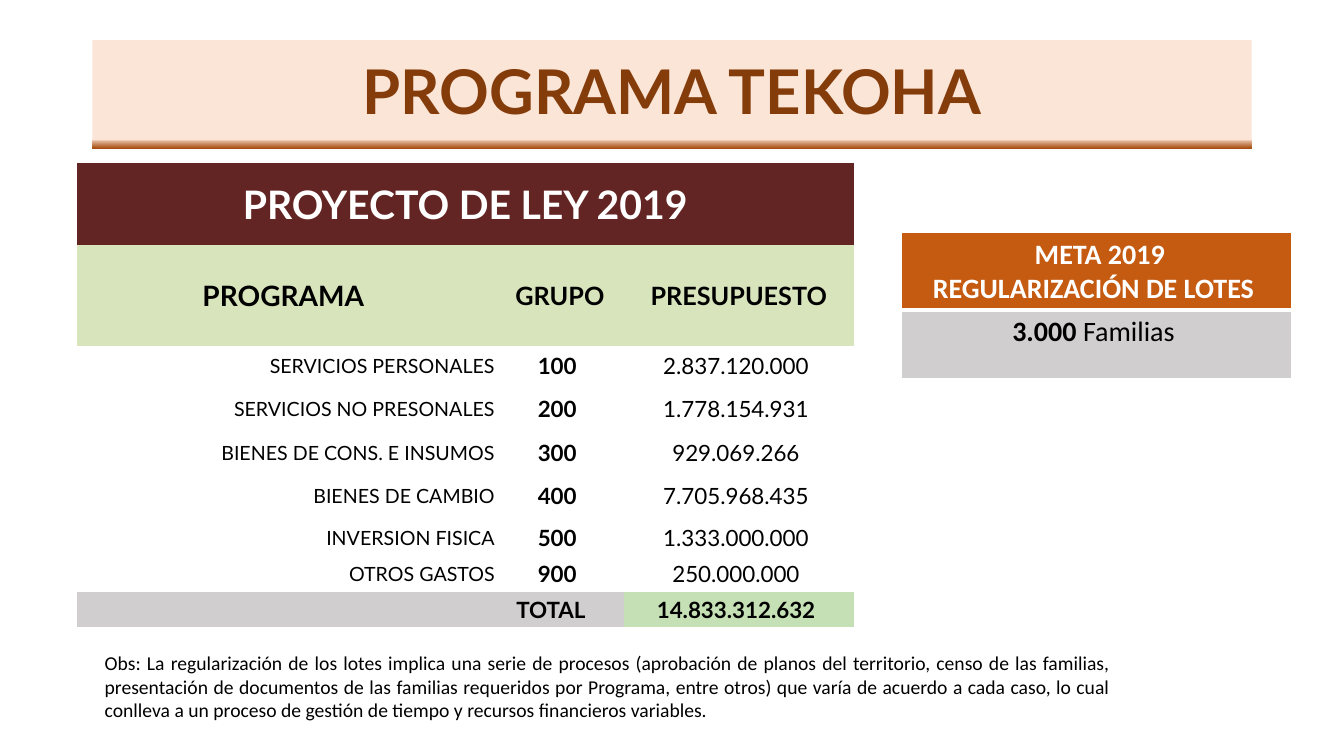
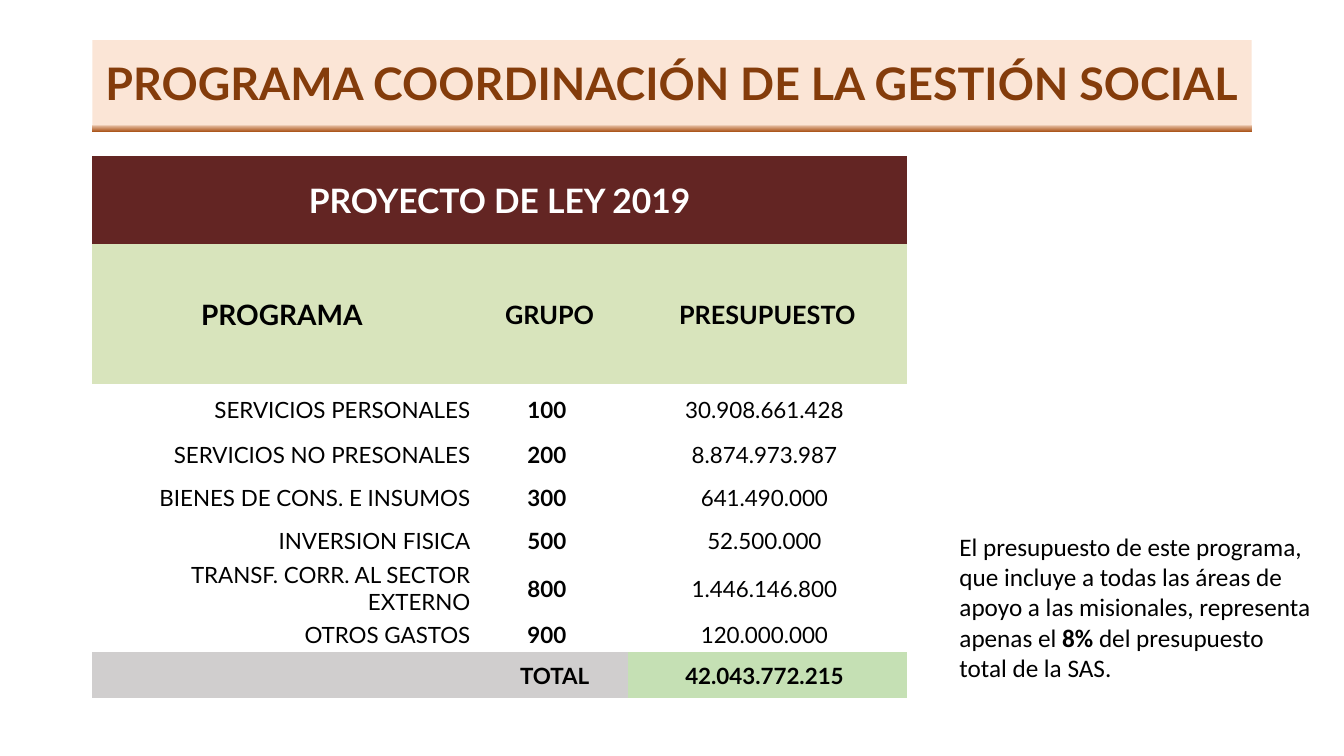
from copy import deepcopy

from lxml.etree import SubElement
from pptx import Presentation
from pptx.dml.color import RGBColor
from pptx.enum.shapes import MSO_SHAPE
from pptx.enum.text import MSO_ANCHOR, PP_ALIGN
from pptx.oxml.ns import qn
from pptx.util import Inches, Pt

COLORS = {
    "title": "843C0B", "peach": "FBE5D6", "tan": "DDAE8E", "rust": "A85014",
    "maroon": "632523", "lime": "D8E4BC", "gray": "D0CECE", "green": "C5E0B4",
    "orange": "C55A11", "white": "FFFFFF", "black": "000000",
}
TITLE_STOPS = [(0.92, "peach"), (0.94, "tan"), (1, "rust")]
PLAIN_TABLE = "{2D5ABB26-0587-4C30-8999-92F81FD0307C}"
CENTER, RIGHT, LEFT, JUSTIFY = PP_ALIGN.CENTER, PP_ALIGN.RIGHT, PP_ALIGN.LEFT, PP_ALIGN.JUSTIFY

deck = Presentation()
deck.slide_width, deck.slide_height = Inches(13.33), Inches(7.5)
COLUMN, ROW = deck.slide_width / 160, deck.slide_height / 90


def write(para, runs, size, color="black", font="Calibri", align=LEFT):
    para.alignment = align
    for text, bold in runs:
        span = para.add_run()
        span.text = text
        span.font.name, span.font.size, span.font.bold = font, Pt(size), bold
        span.font.color.rgb = RGBColor.from_string(COLORS[color])


def add_grid(page, left, top, columns, rows):
    frame = page.shapes.add_table(
        len(rows), len(columns), int(left * COLUMN), int(top * ROW),
        int(sum(columns) * COLUMN), int(sum(rows) * ROW))
    table = frame.table
    table._tbl.tblPr.find(qn("a:tableStyleId")).text = PLAIN_TABLE
    for column, width in zip(table.columns, columns):
        column.width = int(width * COLUMN)
    for row, height in zip(table.rows, rows):
        row.height = int(height * ROW)
    return table


programs = [
    {
        "title": "PROGRAMA TEKOHA", "title_size": 44, "title_rows": 12.84,
        "left": 9.12, "top": 19.44, "columns": [49.92, 15.24, 27.36],
        "rows": [9.72, 12, 4.68, 5.64, 4.68, 5.64, 4.32, 4.32, 4.2],
        "heading_size": 28, "label_size": 14, "program_heading": "PROGRAMA ",
        "budget": [
            ("SERVICIOS PERSONALES", "100 ", "2.837.120.000 "),
            ("SERVICIOS NO PRESONALES", "200 ", "1.778.154.931 "),
            ("BIENES DE CONS. E INSUMOS", "300 ", "929.069.266 "),
            ("BIENES DE CAMBIO", "400 ", "7.705.968.435 "),
            ("INVERSION FISICA", "500 ", "1.333.000.000 "),
            ("OTROS GASTOS", "900 ", "250.000.000 "),
        ],
        "total": "14.833.312.632 ",
        "note_box": (11.28, 76.92, 122.16, 13), "note_size": 14, "note_align": JUSTIFY,
        "note": [("Obs: La regularización de los lotes implica una serie de procesos "
                  "(aprobación de planos del territorio, censo de las familias, presentación "
                  "de documentos de las familias requeridos por Programa, entre otros) que "
                  "varía de acuerdo a cada caso, lo cual conlleva a un proceso de gestión de "
                  "tiempo y recursos financieros variables.", False)],
    },
    {
        "title": "PROGRAMA COORDINACIÓN DE LA GESTIÓN SOCIAL", "title_size": 32, "title_rows": 10.92,
        "left": 11, "top": 18.6, "columns": [45.12, 18.6, 33.24],
        "rows": [10.44, 16.68, 6, 4.68, 5.64, 4.68, 6.6, 4.32, 5.52],
        "heading_size": 24, "label_size": 16, "program_heading": "PROGRAMA",
        "budget": [
            ("SERVICIOS PERSONALES", "100 ", "30.908.661.428 "),
            ("SERVICIOS NO PRESONALES", "200 ", "8.874.973.987 "),
            ("BIENES DE CONS. E INSUMOS", "300 ", "641.490.000 "),
            ("INVERSION FISICA", "500 ", "52.500.000 "),
            ("TRANSF. CORR. AL SECTOR EXTERNO", "800 ", "1.446.146.800 "),
            ("OTROS GASTOS", "900 ", "120.000.000 "),
        ],
        "total": "42.043.772.215 ",
        "note_box": (113.04, 62.64, 44.4, 19.44), "note_size": 18, "note_align": LEFT,
        "note": [("El presupuesto de este programa, que incluye a todas las áreas de apoyo a "
                  "las misionales, representa apenas el ", False), ("8% ", True),
                 ("del presupuesto total de la SAS.", False)],
    },
]

for program in programs:
    page = deck.slides.add_slide(deck.slide_layouts[6])

    band = page.shapes.add_shape(
        MSO_SHAPE.RECTANGLE, int(11 * COLUMN), int(4.8 * ROW),
        int(138 * COLUMN), int(program["title_rows"] * ROW))
    band.shadow.inherit = False
    band.line.fill.background()
    band.fill.gradient()
    band.fill.gradient_angle = 270
    stop_list = band._element.spPr.find(qn("a:gradFill")).find(qn("a:gsLst"))
    stop_list.append(deepcopy(stop_list[-1]))
    for stop, (position, color) in zip(band.fill.gradient_stops, TITLE_STOPS):
        stop.position = position
        stop.color.rgb = RGBColor.from_string(COLORS[color])
    band.text_frame.word_wrap = True
    band.text_frame.vertical_anchor = MSO_ANCHOR.MIDDLE
    title = band.text_frame.paragraphs[0]
    title.line_spacing = 0.9
    write(title, [(program["title"], True)], program["title_size"], "title", "Lato", CENTER)

    table = add_grid(page, program["left"], program["top"], program["columns"], program["rows"])
    last = len(program["rows"]) - 1
    table.cell(0, 0).merge(table.cell(0, 2))
    table.cell(last, 0).merge(table.cell(last, 1))
    texts = [
        ("PROYECTO DE LEY 2019", "", ""),
        (program["program_heading"], "GRUPO", "PRESUPUESTO"),
        *program["budget"],
        ("TOTAL", "", program["total"]),
    ]
    fills = {0: ["maroon"] * 3, 1: ["lime"] * 3, last: ["gray", "gray", "green"]}
    sizes = {0: [program["heading_size"]] * 3, 1: [20, 18, 18], last: [16] * 3}
    for i, line in enumerate(texts):
        for j, text in enumerate(line):
            cell = table.cell(i, j)
            cell.vertical_anchor = MSO_ANCHOR.MIDDLE
            cell.margin_left = cell.margin_top = cell.margin_right = Inches(0.01)
            cell.margin_bottom = 0
            if i in fills:
                cell.fill.solid()
                cell.fill.fore_color.rgb = RGBColor.from_string(COLORS[fills[i][j]])
            else:
                cell.fill.background()
            if text:
                size = sizes.get(i, [program["label_size"], 16, 16])[j]
                write(cell.text_frame.paragraphs[0], [(text, i in fills or j == 1)], size,
                      "white" if i == 0 else "black", "Lato",
                      RIGHT if i > 1 and j == 0 else CENTER)
    table.cell(last, 0).margin_right = Inches(0.38)

    left, top, width, height = program["note_box"]
    box = page.shapes.add_textbox(
        int(left * COLUMN), int(top * ROW), int(width * COLUMN), int(height * ROW))
    box.text_frame.word_wrap = True
    write(box.text_frame.paragraphs[0], program["note"], program["note_size"],
          align=program["note_align"])

goal = add_grid(deck.slides[0], 107.4, 27.72, [46.32], [9, 8.04])
goal_cells = [
    ("orange", "white", [[(" META 2019", True)], [("REGULARIZACIÓN DE LOTES ", True)]]),
    ("gray", "black", [[("3.000 ", True), ("Familias ", False)]]),
]
for i, (fill, color, lines) in enumerate(goal_cells):
    cell = goal.cell(i, 0)
    for k, runs in enumerate(lines):
        frame = cell.text_frame
        para = frame.add_paragraph() if k else frame.paragraphs[0]
        write(para, runs, 20, color, align=CENTER)
    edge = SubElement(cell._tc.get_or_add_tcPr(), qn("a:lnT" if i else "a:lnB"), w=str(Pt(3)))
    edge_fill = SubElement(edge, qn("a:solidFill"))
    SubElement(edge_fill, qn("a:srgbClr"), val=COLORS["white"])
    cell.fill.solid()
    cell.fill.fore_color.rgb = RGBColor.from_string(COLORS[fill])

deck.save("out.pptx")
